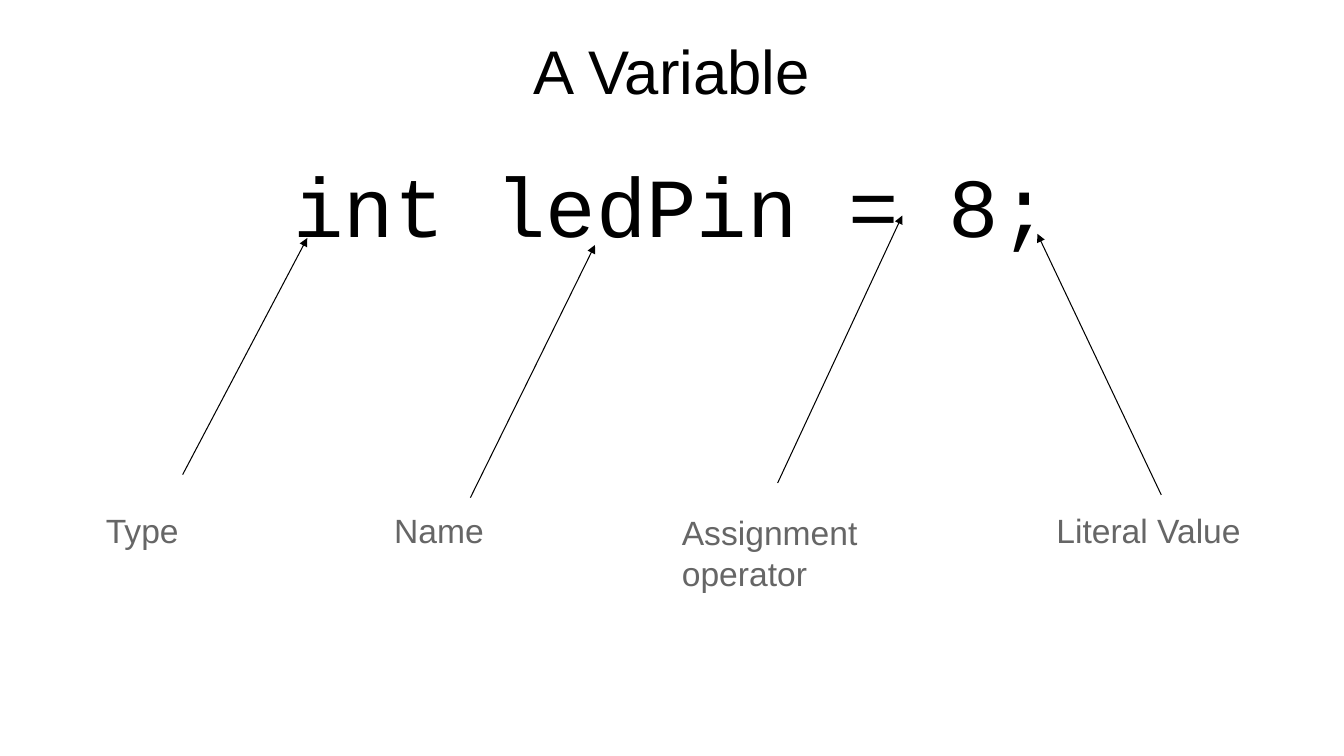
from dataclasses import dataclass

from lxml.etree import SubElement
from pptx import Presentation
from pptx.dml.color import RGBColor
from pptx.enum.shapes import MSO_CONNECTOR
from pptx.enum.text import MSO_ANCHOR, PP_ALIGN
from pptx.oxml.ns import qn
from pptx.util import Pt


@dataclass(frozen=True)
class TextStyle:
    font: str
    size: float
    line_height: float
    color: RGBColor
    align: PP_ALIGN = PP_ALIGN.LEFT
    anchor: MSO_ANCHOR = MSO_ANCHOR.TOP
    margins: tuple = (0, 0)


@dataclass(frozen=True)
class Theme:
    black = RGBColor(0x00, 0x00, 0x00)
    gray = RGBColor(0x66, 0x66, 0x66)
    line_width = 0.75
    title = TextStyle("Arial", 44, 59, black, PP_ALIGN.CENTER, MSO_ANCHOR.MIDDLE)
    code = TextStyle("Courier New", 60, 79, black, PP_ALIGN.CENTER)
    label = TextStyle("Arial", 24, 29.3, gray, margins=(7.2, 3.6))


THEME = Theme()
SLIDE_WIDTH, SLIDE_HEIGHT = 960, 540

# Label text, label box (left, top, width, height), arrow start, arrow tip
PARTS = [
    ("Type", (68.5, 360, 103, 54.5), (130.5, 339), (219.5, 170)),
    ("Name", (274.5, 360, 123, 51), (336, 355.5), (425, 175)),
    ("Assignment operator", (480, 361.5, 171.5, 54.5), (555.5, 345), (644.5, 154)),
    ("Literal Value", (747.5, 360, 192, 54.5), (829.5, 353.5), (741, 167)),
]


def add_text(slide, text, box, style):
    shape = slide.shapes.add_textbox(*map(Pt, box))
    frame = shape.text_frame
    frame.word_wrap = True
    frame.vertical_anchor = style.anchor
    horizontal, vertical = map(Pt, style.margins)
    frame.margin_left = frame.margin_right = horizontal
    frame.margin_top = frame.margin_bottom = vertical
    paragraph = frame.paragraphs[0]
    paragraph.alignment = style.align
    paragraph.line_spacing = Pt(style.line_height)
    run = paragraph.add_run()
    run.text = text
    run.font.name = style.font
    run.font.size = Pt(style.size)
    run.font.color.rgb = style.color


def add_arrow(slide, start, tip):
    arrow = slide.shapes.add_connector(
        MSO_CONNECTOR.STRAIGHT, *map(Pt, (*start, *tip)))
    arrow.line.width = Pt(THEME.line_width)
    arrow.line.color.rgb = THEME.black
    SubElement(arrow.line._get_or_add_ln(), qn("a:tailEnd"), type="triangle")
    SubElement(arrow._element.spPr, qn("a:effectLst"))


def add_variable_slide(presentation):
    slide = presentation.slides.add_slide(presentation.slide_layouts[6])
    add_text(slide, "A Variable", (343, 2, 274, 90), THEME.title)
    add_text(slide, "int ledPin = 8;", (137, 103, 685.5, 64), THEME.code)
    for text, box, start, tip in PARTS:
        add_text(slide, text, box, THEME.label)
        add_arrow(slide, start, tip)


def main():
    presentation = Presentation()
    presentation.slide_width = Pt(SLIDE_WIDTH)
    presentation.slide_height = Pt(SLIDE_HEIGHT)
    add_variable_slide(presentation)
    presentation.save("out.pptx")


if __name__ == "__main__":
    main()
